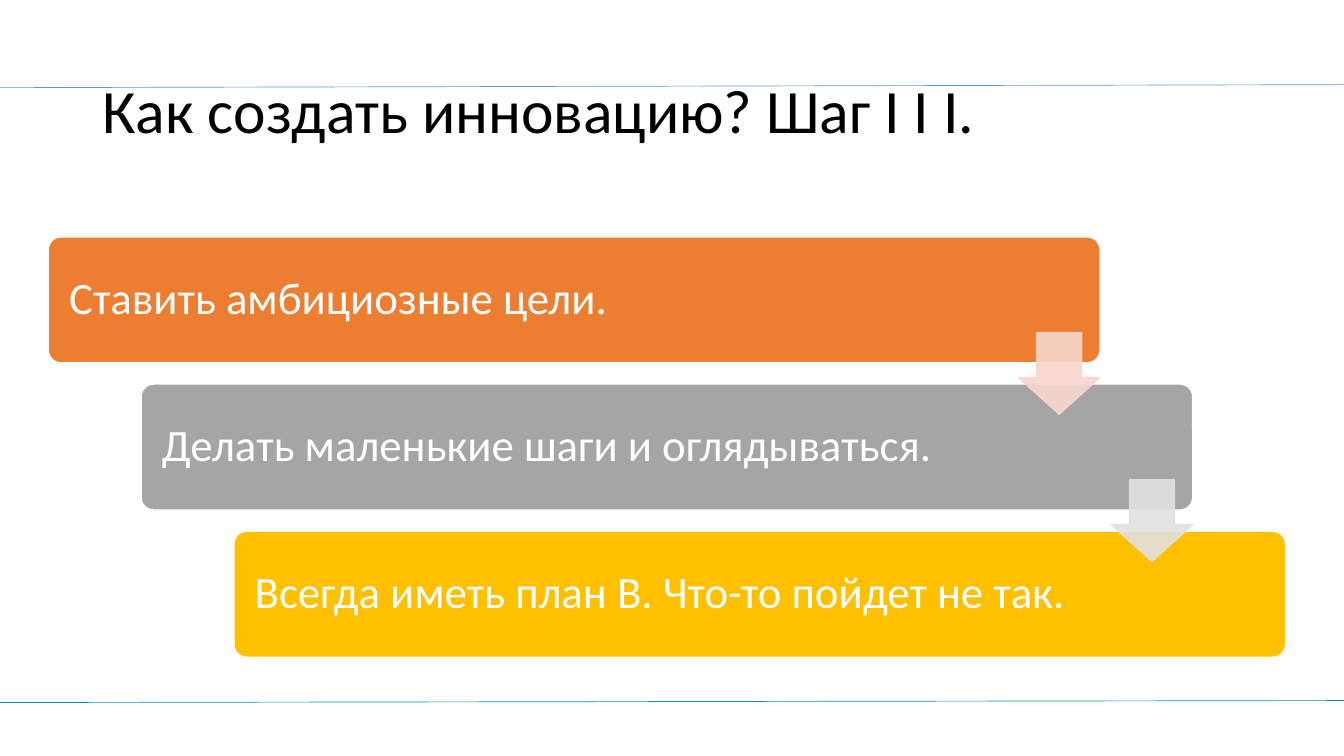
"""Build a slide with three staggered steps joined by down arrows."""
from lxml.etree import SubElement
from pptx import Presentation
from pptx.dml.color import RGBColor
from pptx.enum.shapes import MSO_CONNECTOR as Connector, MSO_SHAPE as Shape
from pptx.enum.text import MSO_ANCHOR as Anchor, PP_ALIGN as Align
from pptx.oxml.ns import qn
from pptx.util import Inches, Pt

COLORS = {
    "title": "000000", "white": "FFFFFF", "top rule": "5B9BD5", "bottom rule": "0097A9",
    "orange": "ED7D31", "gray": "A5A5A5", "gold": "FFC000",
    "pink arrow": "F8D7CE", "gray arrow": "E1E1E1",
}
LEFT, TOP = 0.48, 2.35
STEP_X, STEP_Y = 0.92, 1.46
CARD_WIDTH, CARD_HEIGHT = 10.43, 1.25
ARROW_SIZE = 0.81
STEPS = [
    ("Ставить амбициозные цели.", "orange"),
    ("Делать маленькие шаги и оглядываться.", "gray"),
    ("Всегда иметь план B. Что-то пойдет не так.", "gold"),
]
RULES = [("top rule", 0.87, 0.84), ("bottom rule", 6.97, 6.95)]


def write(shape, text, size, color, inset):
    frame = shape.text_frame
    frame.word_wrap = True
    frame.vertical_anchor = Anchor.MIDDLE
    frame.margin_left = frame.margin_right = Inches(inset)
    paragraph = frame.paragraphs[0]
    paragraph.alignment = Align.LEFT
    paragraph.line_spacing = 0.9
    run = paragraph.add_run()
    run.text = text
    run.font.name = "Calibri"
    run.font.size = Pt(size)
    run.font.color.rgb = RGBColor.from_string(COLORS[color])


def add_panel(kind, left, top, width, height, fill, line):
    shape = slide.shapes.add_shape(kind, Inches(left), Inches(top), Inches(width), Inches(height))
    shape.shadow.inherit = False
    shape.fill.solid()
    shape.fill.fore_color.rgb = RGBColor.from_string(COLORS[fill])
    shape.line.color.rgb = RGBColor.from_string(COLORS[line])
    shape.line.width = Pt(1)
    return shape


presentation = Presentation()
presentation.slide_width = Inches(13.33)
presentation.slide_height = Inches(7.5)
slide = presentation.slides.add_slide(presentation.slide_layouts[6])

for color, start, end in RULES:
    rule = slide.shapes.add_connector(
        Connector.STRAIGHT, 0, Inches(start), presentation.slide_width, Inches(end))
    rule.line.color.rgb = RGBColor.from_string(COLORS[color])
    rule.line.width = Pt(0.48)
    SubElement(rule.element.spPr, qn("a:effectLst"))

title = slide.shapes.add_textbox(Inches(0.92), Inches(0.4), Inches(11.5), Inches(1.45))
write(title, "Как создать инновацию? Шаг I I I.", 44, "title", 0.1)

for index, (text, color) in enumerate(STEPS):
    card = add_panel(Shape.ROUNDED_RECTANGLE, LEFT + index * STEP_X, TOP + index * STEP_Y,
                     CARD_WIDTH, CARD_HEIGHT, color, "white")
    card.adjustments[0] = 0.1
    write(card, text, 32, "white", 0.17)

for index, color in enumerate(["pink arrow", "gray arrow"]):
    arrow = add_panel(Shape.DOWN_ARROW, LEFT + CARD_WIDTH - ARROW_SIZE + index * STEP_X,
                      TOP + 0.95 + index * STEP_Y, ARROW_SIZE, ARROW_SIZE, color, color)
    arrow.adjustments[0] = 0.55
    arrow.adjustments[1] = 0.45
    for tint in arrow.element.spPr.iter(qn("a:srgbClr")):
        SubElement(tint, qn("a:alpha"), val="90000")

presentation.save("out.pptx")
